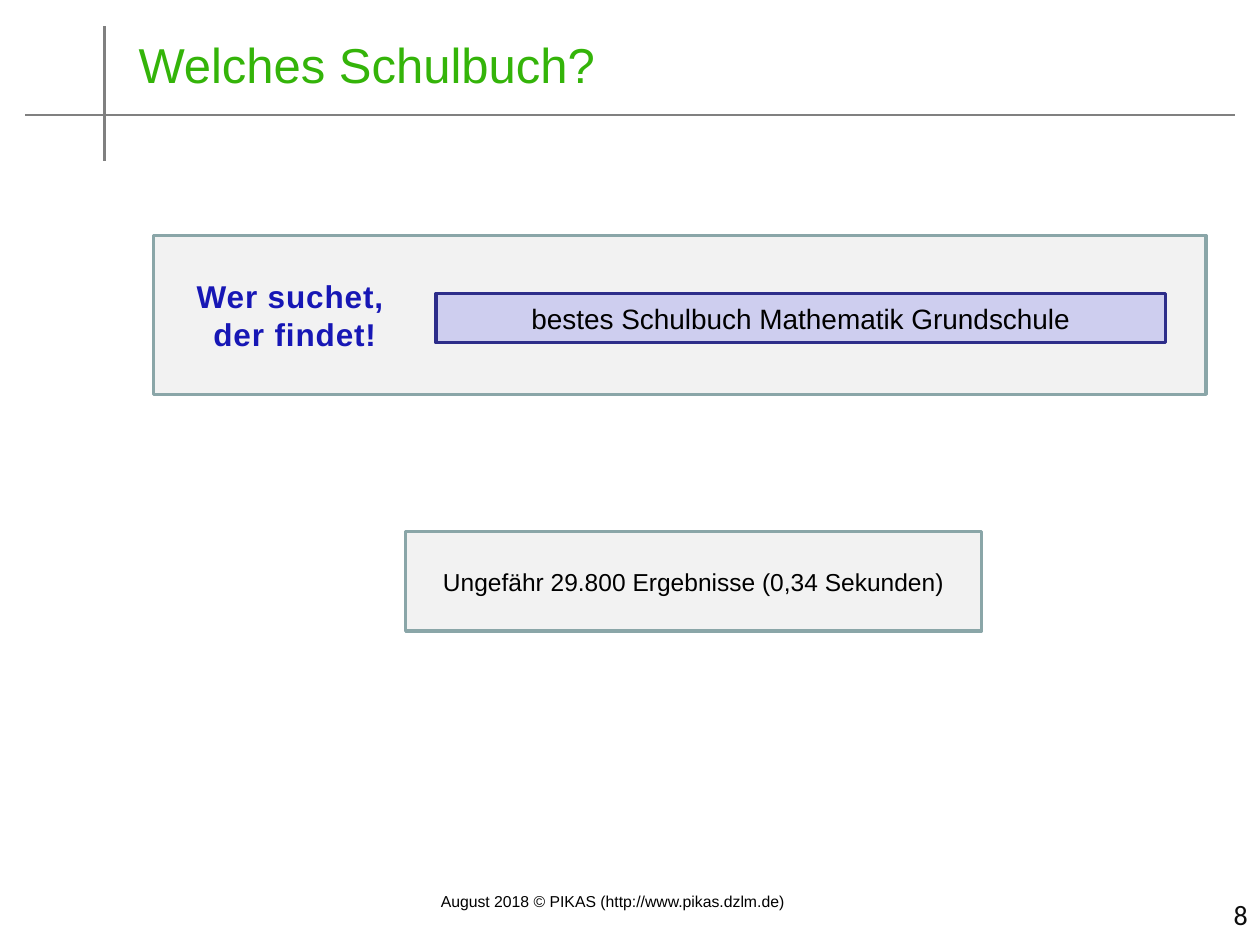
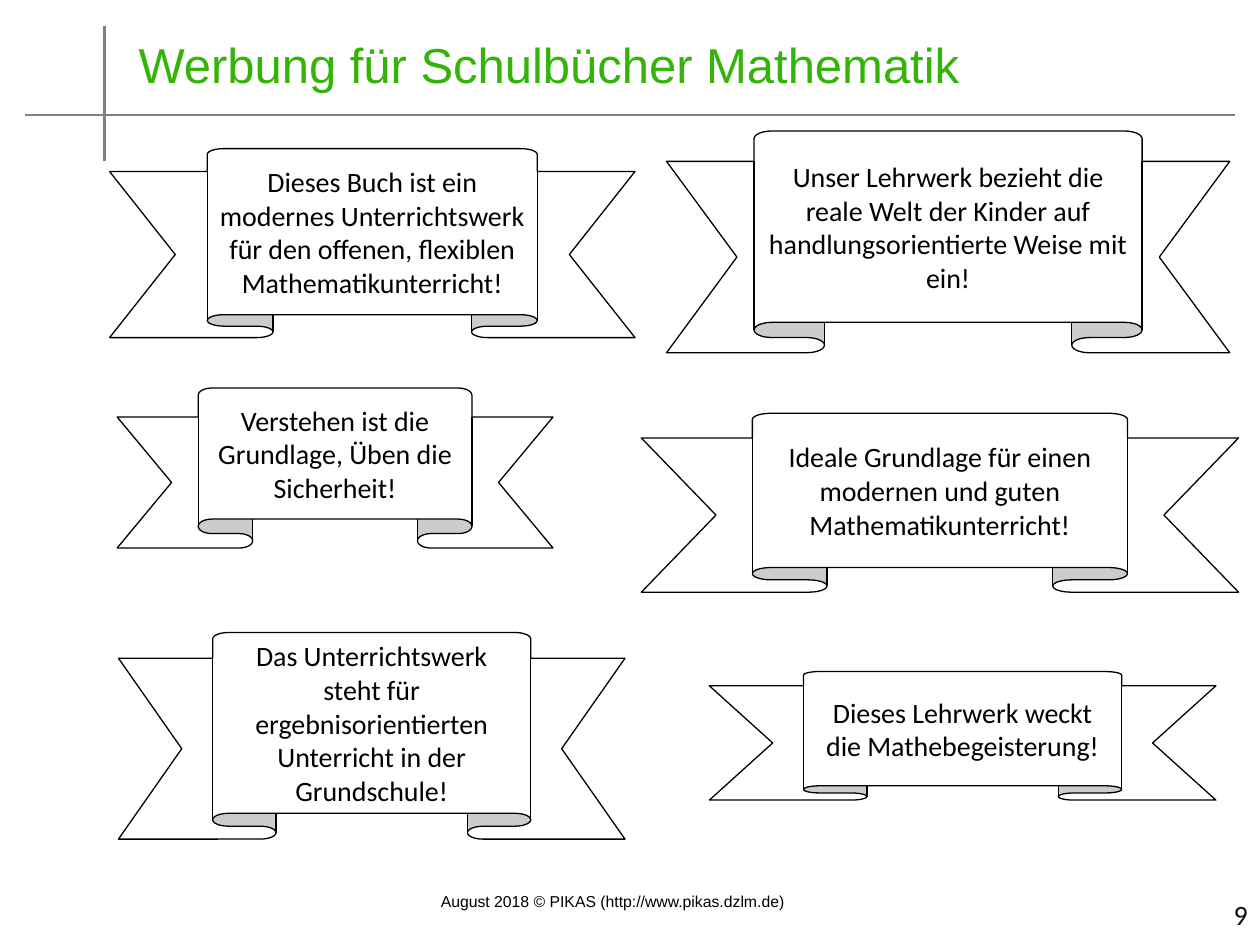
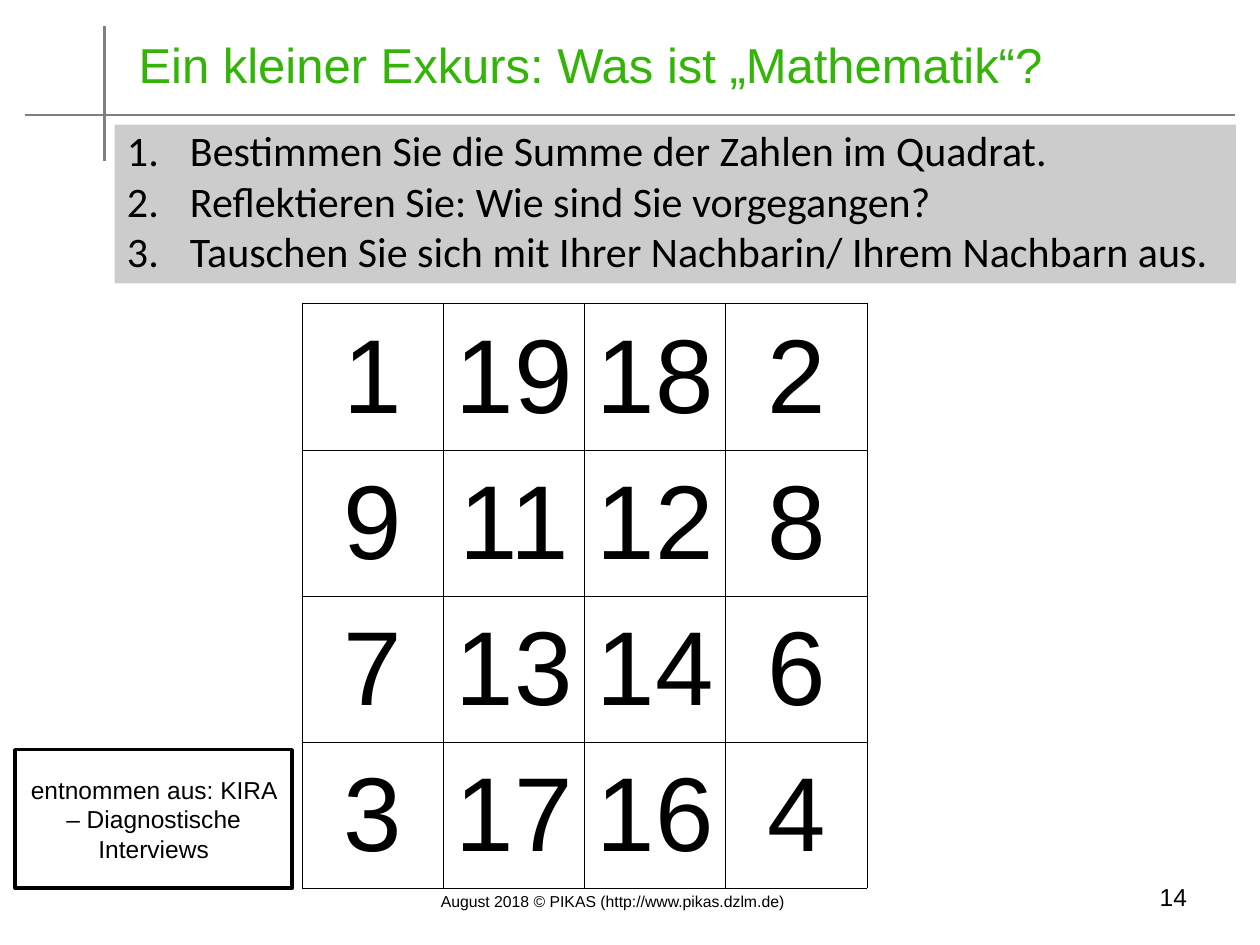
"""Build three slides on choosing mathematics schoolbooks."""
import pptx
import pptx.util
import pptx.dml.color
import pptx.enum.shapes
import pptx.enum.text
import pptx.oxml.ns
import lxml.etree

Inches = pptx.util.Inches
Pt = pptx.util.Pt
SHAPES = pptx.enum.shapes.MSO_SHAPE
ANCHORS = pptx.enum.text.MSO_ANCHOR
ALIGN = pptx.enum.text.PP_ALIGN
qn = pptx.oxml.ns.qn

BLACK, WHITE, GREEN, GREY = "000000", "FFFFFF", "34B409", "808080"
PANEL, PANEL_EDGE = "F2F2F2", "8AA6A8"

FOOTER = "August 2018 © PIKAS (http://www.pikas.dzlm.de)"
CROSSHAIR = [(0.2, 0.91, 9.8, 0.91), (0.83, 0.21, 0.83, 1.28)]

SEARCH_SLOGAN = ["Wer suchet, ", "der findet!"]
SEARCH_QUERY = "bestes Schulbuch Mathematik Grundschule"
SEARCH_RESULT = "Ungefähr 29.800 Ergebnisse (0,34 Sekunden)"

SLOGANS = [
    ("Dieses Buch ist ein modernes Unterrichtswerk für den offenen, flexiblen Mathematikunterricht!",
     (0.87, 1.18, 4.17, 1.5), (0.121, 0.628)),
    ("Verstehen ist die Grundlage, Üben die Sicherheit!",
     (0.93, 3.08, 3.46, 1.27), (0.181, 0.628)),
    ("Unser Lehrwerk bezieht die reale Welt der Kinder auf handlungsorientierte Weise mit ein!",
     (5.29, 1.04, 4.47, 1.76), (0.137, 0.689)),
    ("Ideale Grundlage für einen modernen und guten Mathematikunterricht!",
     (5.09, 3.28, 4.74, 1.42), (0.138, 0.628)),
    ("Dieses Lehrwerk weckt die Mathebegeisterung!",
     (5.63, 5.33, 4.02, 1.02), (0.111, 0.628)),
    ("Das Unterrichtswerk steht für ergebnisorientierten Unterricht in der Grundschule!",
     (0.94, 5.02, 4.02, 1.64), (0.125, 0.628)),
]

TASKS = [
    "Bestimmen Sie die Summe der Zahlen im Quadrat.",
    "Reflektieren Sie: Wie sind Sie vorgegangen?",
    "Tauschen Sie sich mit Ihrer Nachbarin/ Ihrem Nachbarn aus.",
]
SQUARE = [(1, 19, 18, 2), (9, 11, 12, 8), (7, 13, 14, 6), (3, 17, 16, 4)]
SQUARE_SOURCE = "entnommen aus: KIRA – Diagnostische Interviews"


def color(value):
    """Turn a hex string into a colour."""
    return pptx.dml.color.RGBColor.from_string(value)


def write(text_frame, text, size=16, font="Arial", ink=BLACK, align=ALIGN.CENTER,
          anchor=ANCHORS.MIDDLE, bold=False, spacing=0, wrap=True, numbered=False):
    """Fill a text frame with one paragraph per line of text."""
    text_frame.word_wrap = wrap
    if anchor is not None:
        text_frame.vertical_anchor = anchor
    for index, line in enumerate([text] if isinstance(text, str) else text):
        paragraph = text_frame.add_paragraph() if index else text_frame.paragraphs[0]
        paragraph.alignment = align
        if numbered:
            properties = paragraph._p.get_or_add_pPr()
            properties.set("marL", str(Inches(0.5)))
            properties.set("indent", str(-Inches(0.5)))
            bullet_font = lxml.etree.SubElement(properties, qn("a:buFont"))
            bullet_font.set("typeface", "+mj-lt")
            bullet = lxml.etree.SubElement(properties, qn("a:buAutoNum"))
            bullet.set("type", "arabicPeriod")
        run = paragraph.add_run()
        run.text = line
        run.font.size = Pt(size)
        run.font.name = font
        run.font.bold = bold
        run.font.color.rgb = color(ink)
        if spacing:
            run._r.get_or_add_rPr().set("spc", str(round(spacing * 100)))


def add_text(slide, box, text, **format):
    """Add a text box."""
    shape = slide.shapes.add_textbox(*map(Inches, box))
    write(shape.text_frame, text, **format)
    return shape


def add_box(slide, box, fill, edge=None, width=2, kind=SHAPES.RECTANGLE, text=None, **format):
    """Add a filled preset shape with optional outline and text."""
    shape = slide.shapes.add_shape(kind, *map(Inches, box))
    shape.shadow.inherit = False
    shape.fill.solid()
    shape.fill.fore_color.rgb = color(fill)
    if edge:
        shape.line.color.rgb = color(edge)
        shape.line.width = Pt(width)
    else:
        shape.line.fill.background()
    if text:
        write(shape.text_frame, text, **format)
    return shape


def add_slide(presentation, title):
    """Add a slide with the shared title, crosshair and footer."""
    slide = presentation.slides.add_slide(presentation.slide_layouts[5])
    for ends in CROSSHAIR:
        line = slide.shapes.add_connector(
            pptx.enum.shapes.MSO_CONNECTOR.STRAIGHT, *map(Inches, ends))
        line.line.color.rgb = color(GREY)
        line.line.width = Pt(1.25)
        lxml.etree.SubElement(line._element.spPr, qn("a:effectLst"))
    add_text(slide, (3.4, 7.03, 2.99, 0.25), FOOTER, size=9, align=ALIGN.LEFT,
             anchor=ANCHORS.TOP, wrap=False)
    heading = slide.shapes.title
    heading.left, heading.top, heading.width, heading.height = map(Inches, (1, 0.17, 8.5, 0.67))
    write(heading.text_frame, title, size=28, ink=GREEN, align=ALIGN.LEFT)
    return slide


def add_page_number(slide, number):
    """Add the page number in the lower right corner."""
    add_text(slide, (7.75, 7.06, 2.25, 0.4), number, font="Calibri", ink="0D0D0D",
             align=ALIGN.RIGHT)


def add_borders(cell, ink, width):
    """Draw a line on all four sides of a table cell."""
    properties = cell._tc.get_or_add_tcPr()
    for index, side in enumerate(("a:lnL", "a:lnR", "a:lnT", "a:lnB")):
        border = lxml.etree.Element(qn(side), w=str(Pt(width)))
        fill = lxml.etree.SubElement(border, qn("a:solidFill"))
        lxml.etree.SubElement(fill, qn("a:srgbClr"), val=ink)
        properties.insert(index, border)


def add_number_square(slide, left, top, column_width, row_height):
    """Add the square of numbers as a table."""
    rows, columns = len(SQUARE), len(SQUARE[0])
    table = slide.shapes.add_table(
        rows, columns, Inches(left), Inches(top),
        Inches(column_width * columns), Inches(row_height * rows)).table
    table.first_row = table.horz_banding = False
    for row, numbers in enumerate(SQUARE):
        for column, number in enumerate(numbers):
            cell = table.cell(row, column)
            cell.fill.background()
            cell.margin_left = cell.margin_right = Inches(0.07)
            cell.margin_top = cell.margin_bottom = 0
            cell.vertical_anchor = ANCHORS.MIDDLE
            write(cell.text_frame, str(number), size=60, anchor=None)
            add_borders(cell, BLACK, 0.23)


def build_search(presentation):
    """Build the slide with the search query and its result."""
    slide = add_slide(presentation, "Welches Schulbuch?")
    add_page_number(slide, "8")
    add_box(slide, (1.22, 1.87, 8.35, 1.26), PANEL, PANEL_EDGE)
    add_text(slide, (1.45, 2.15, 1.78, 0.71), SEARCH_SLOGAN, size=18, ink="1717B5",
             bold=True, spacing=0.5, anchor=ANCHORS.TOP, wrap=False)
    add_box(slide, (3.46, 2.33, 5.79, 0.39), "CECEEF", "2D2D8A", text=SEARCH_QUERY)
    add_box(slide, (3.22, 4.22, 4.57, 0.79), PANEL, PANEL_EDGE, text=SEARCH_RESULT, size=14)


def build_slogans(presentation):
    """Build the slide with advertising slogans on ribbons."""
    slide = add_slide(presentation, "Werbung für Schulbücher Mathematik")
    add_page_number(slide, "9")
    for text, box, adjustments in SLOGANS:
        ribbon = add_box(slide, box, WHITE, BLACK, 0.75, kind=SHAPES.UP_RIBBON,
                         text=text, font="Calibri")
        for index, value in enumerate(adjustments):
            ribbon.adjustments[index] = value


def build_excursus(presentation):
    """Build the slide with the tasks and the number square."""
    slide = add_slide(presentation, "Ein kleiner Exkurs: Was ist „Mathematik“?")
    tasks = add_box(slide, (0.91, 0.99, 8.9, 1.26), "CCCCCC", text=TASKS, size=24,
                    font="Calibri", align=ALIGN.LEFT, anchor=ANCHORS.TOP, numbered=True)
    tasks.text_frame.margin_top = 0
    add_text(slide, (8.36, 6.95, 1.16, 0.31), "14", size=14, align=ALIGN.RIGHT,
             anchor=ANCHORS.TOP)
    add_number_square(slide, 2.4, 2.41, 1.12, 1.16)
    add_box(slide, (0.12, 5.95, 2.2, 1.1), WHITE, BLACK, text=SQUARE_SOURCE, size=14)


def main():
    """Create and save the presentation."""
    presentation = pptx.Presentation()
    presentation.slide_width, presentation.slide_height = Inches(10), Inches(7.5)
    build_search(presentation)
    build_slogans(presentation)
    build_excursus(presentation)
    presentation.save("out.pptx")


if __name__ == "__main__":
    main()
